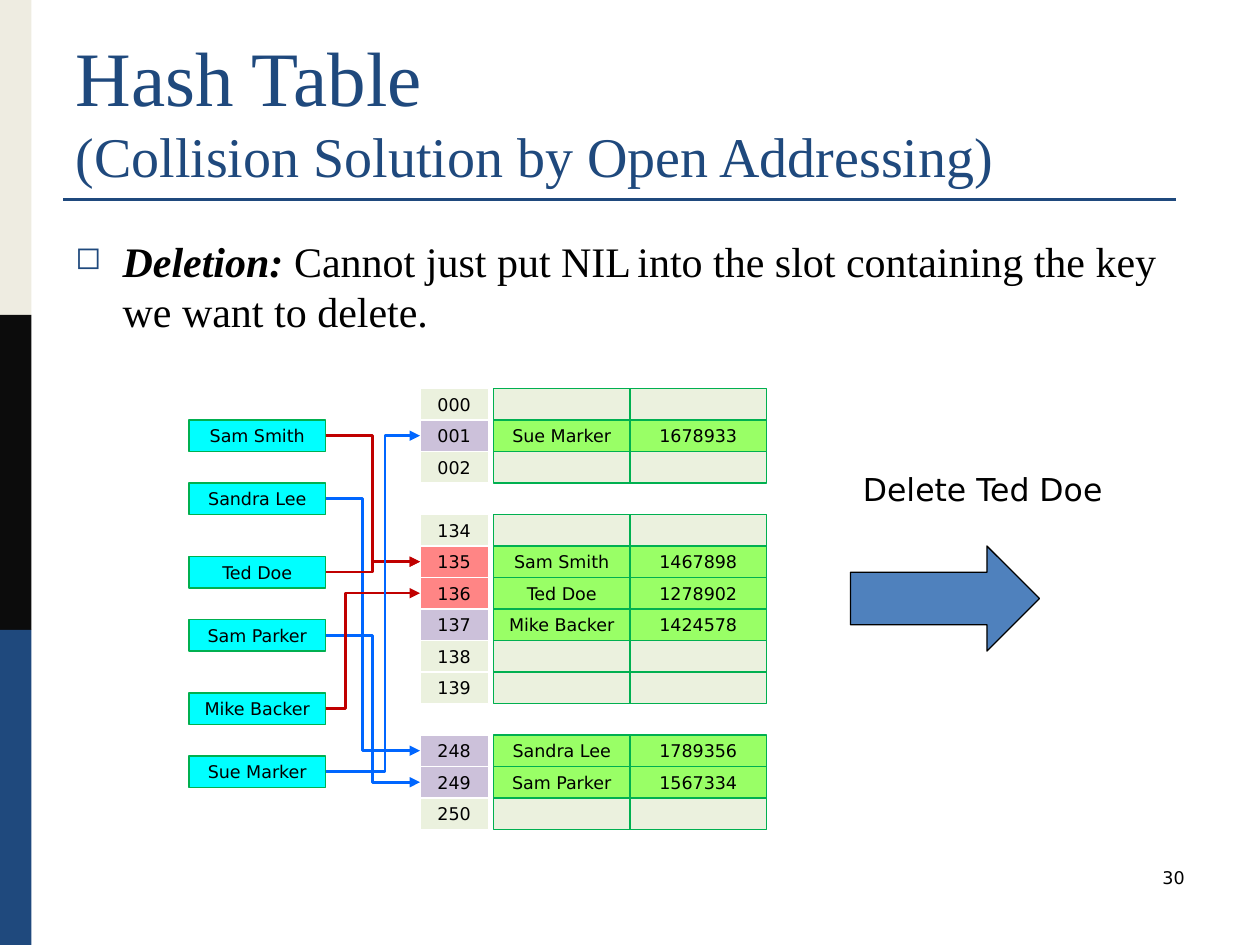
from lxml import etree
from pptx import Presentation
from pptx.dml.color import RGBColor
from pptx.enum.shapes import MSO_CONNECTOR, MSO_SHAPE
from pptx.enum.text import MSO_ANCHOR, MSO_AUTO_SIZE, PP_ALIGN
from pptx.oxml.ns import qn
from pptx.util import Pt

RECT, RIGHT_ARROW = MSO_SHAPE.RECTANGLE, MSO_SHAPE.RIGHT_ARROW
STRAIGHT, ELBOW = MSO_CONNECTOR.STRAIGHT, MSO_CONNECTOR.ELBOW
MIDDLE, BOTTOM = MSO_ANCHOR.MIDDLE, MSO_ANCHOR.BOTTOM
LEFT, CENTER, RIGHT = PP_ALIGN.LEFT, PP_ALIGN.CENTER, PP_ALIGN.RIGHT
NO_FIT, GROW = MSO_AUTO_SIZE.NONE, MSO_AUTO_SIZE.SHAPE_TO_FIT_TEXT

SERIF, SANS = "Times New Roman", "DejaVu Sans"
COLORS = {
    "navy": "1F497D", "cream": "EEECE1", "coal": "0C0C0C", "black": "000000",
    "white": "FFFFFF", "key": "00FFFF", "border": "00B050", "filled": "99FF66",
    "empty": "EBF1DE", "used": "CCC1DA", "collided": "FF8585",
    "red": "C00000", "blue": "0066FF", "arrow": "4F81BD",
}

TITLE = [("Hash Table", 44), ("(Collision Solution by Open Addressing)", 32)]
BULLET = [("Deletion: ", 24, True), ("Cannot just put NIL", 24, False), (" ", 14, False),
          ("into the slot containing the key we want to delete.", 24, False)]
PAGE_NUMBER = "30"
ACTION = "Delete Ted Doe"
STRIPES = ["cream", "coal", "navy"]

KEY_FIELDS = ("name", "top", "slot", "color", "bend")
KEYS = [dict(zip(KEY_FIELDS, values)) for values in (
    ("Sam Smith", 240, "135", "red", 0.5),
    ("Sandra Lee", 276, "248", "blue", 0.39),
    ("Ted Doe", 318, "135", "red", 0.5),
    ("Sam Parker", 354, "249", "blue", 0.5),
    ("Mike Backer", 396, "136", "red", 0.21),
    ("Sue Marker", 432, "001", "blue", 0.63),
)]
SLOT_GROUPS = [
    [("000", "empty", "", ""), ("001", "used", "Sue Marker", "1678933"),
     ("002", "empty", "", "")],
    [("134", "empty", "", ""), ("135", "collided", "Sam Smith", "1467898"),
     ("136", "collided", "Ted Doe", "1278902"), ("137", "used", "Mike Backer", "1424578"),
     ("138", "empty", "", ""), ("139", "empty", "", "")],
    [("248", "used", "Sandra Lee", "1789356"), ("249", "used", "Sam Parker", "1567334"),
     ("250", "empty", "", "")],
]
ROW_HEIGHT, TABLE_TOP = 18, 222
KEY_LEFT, SLOT_LEFT, ENTRY_LEFT = 108, 240, 282
CELL_WIDTH, SLOT_WIDTH = 78, 39


def rgb(name):
    return RGBColor.from_string(COLORS[name])


def style(font, size, face=SANS, color="black"):
    font.size, font.name = Pt(size), face
    font.color.rgb = rgb(color)


def add_block(slide, preset, left, top, width, height, fill, border=None):
    block = slide.shapes.add_shape(preset, Pt(left), Pt(top), Pt(width), Pt(height))
    block.shadow.inherit = False
    block.fill.solid()
    block.fill.fore_color.rgb = rgb(fill)
    if border:
        block.line.color.rgb = rgb(border)
        block.line.width = Pt(0.75)
    else:
        block.line.fill.background()
    return block


def add_cell(slide, left, top, width, fill, border, label):
    cell = add_block(slide, RECT, left, top, width, ROW_HEIGHT, fill, border)
    if label:
        frame = cell.text_frame
        frame.margin_top = frame.margin_bottom = 0
        frame.vertical_anchor = MIDDLE
        frame.text = label
        frame.paragraphs[0].alignment = CENTER
        style(frame.paragraphs[0].runs[0].font, 10)
    return cell


def add_line(slide, kind, start, end, color):
    line = slide.shapes.add_connector(kind, *start, *end)
    line.line.color.rgb = rgb(color)
    line.line.width = Pt(1.5)
    etree.SubElement(line._element.spPr, qn("a:effectLst"))
    return line


def add_link(slide, key, slot, color, bend):
    start = key.left + key.width, key.top + key.height // 2
    end = slot.left, slot.top + slot.height // 2
    link = add_line(slide, ELBOW, start, end, color)
    link.begin_connect(key, 3)
    link.end_connect(slot, 1)
    outline = link._element.spPr.find(qn("a:ln"))
    etree.SubElement(outline, qn("a:tailEnd"), type="triangle")
    geometry = link._element.spPr.find(qn("a:prstGeom"))
    guides = geometry.find(qn("a:avLst"))
    if guides is None:
        guides = etree.SubElement(geometry, qn("a:avLst"))
    etree.SubElement(guides, qn("a:gd"), name="adj1", fmla=f"val {round(bend * 100000)}")


def add_text(slide, left, top, width, height):
    box = slide.shapes.add_textbox(Pt(left), Pt(top), Pt(width), Pt(height))
    box.text_frame.word_wrap = True
    return box.text_frame


def add_label(slide, left, top, width, height, text, size, align):
    frame = add_text(slide, left, top, width, height)
    frame.text = text
    frame.paragraphs[0].alignment = align
    style(frame.paragraphs[0].runs[0].font, size)
    return frame


def add_title(slide):
    title = slide.shapes.title
    title.left, title.top, title.width, title.height = Pt(36), Pt(21.6), Pt(648), Pt(90)
    frame = title.text_frame
    frame.text = "\v".join(text for text, _ in TITLE)
    frame.auto_size, frame.vertical_anchor = NO_FIT, BOTTOM
    heading = frame.paragraphs[0]
    heading.alignment = LEFT
    for run, (_, size) in zip(heading.runs, TITLE):
        style(run.font, size, SERIF, "navy")


def add_bullet(slide):
    frame = add_text(slide, 36, 126, 648, 356.4)
    frame.margin_top = Pt(8.4)
    paragraph = frame.paragraphs[0]
    props = paragraph._p.get_or_add_pPr()
    props.set("marL", str(Pt(27)))
    props.set("indent", str(-Pt(27)))
    bullet_color = etree.SubElement(props, qn("a:buClr"))
    etree.SubElement(bullet_color, qn("a:srgbClr"), val=COLORS["navy"])
    etree.SubElement(props, qn("a:buSzPct"), val="75000")
    etree.SubElement(props, qn("a:buChar"), char="◻")
    for text, size, emphasis in BULLET:
        run = paragraph.add_run()
        run.text = text
        style(run.font, size, SERIF)
        run.font.bold = run.font.italic = emphasis


def add_slots(slide):
    slots, top = {}, TABLE_TOP
    for group in SLOT_GROUPS:
        for index, state, name, number in group:
            fill = "filled" if name else "empty"
            for column, label in enumerate((name, number)):
                add_cell(slide, ENTRY_LEFT + column * CELL_WIDTH, top, CELL_WIDTH,
                         fill, "border", label)
            slots[index] = add_cell(slide, SLOT_LEFT, top, SLOT_WIDTH, state, "white", index)
            top += ROW_HEIGHT
        top += ROW_HEIGHT
    return slots


def main():
    """Build the slide on deletion in an open-addressing hash table."""
    deck = Presentation()
    deck.slide_width, deck.slide_height = Pt(720), Pt(540)
    slide = deck.slides.add_slide(deck.slide_layouts[5])
    for row, color in enumerate(STRIPES):
        add_block(slide, RECT, 0, row * 180, 18, 180, color)
    add_line(slide, STRAIGHT, (Pt(36), Pt(114)), (Pt(672), Pt(114)), "navy")
    add_title(slide)
    add_bullet(slide)
    add_label(slide, 516, 492, 168, 36, PAGE_NUMBER, 10, RIGHT)
    slots = add_slots(slide)
    boxes = [add_cell(slide, KEY_LEFT, key["top"], CELL_WIDTH, "key", "border", key["name"])
             for key in KEYS]
    for box, key in zip(boxes, KEYS):
        add_link(slide, box, slots[key["slot"]], key["color"], key["bend"])
    add_block(slide, RIGHT_ARROW, 486, 312, 108, 60, "arrow", "black")
    add_label(slide, 486, 265, 168, 29, ACTION, 18, LEFT).auto_size = GROW
    deck.save("out.pptx")


if __name__ == "__main__":
    main()
